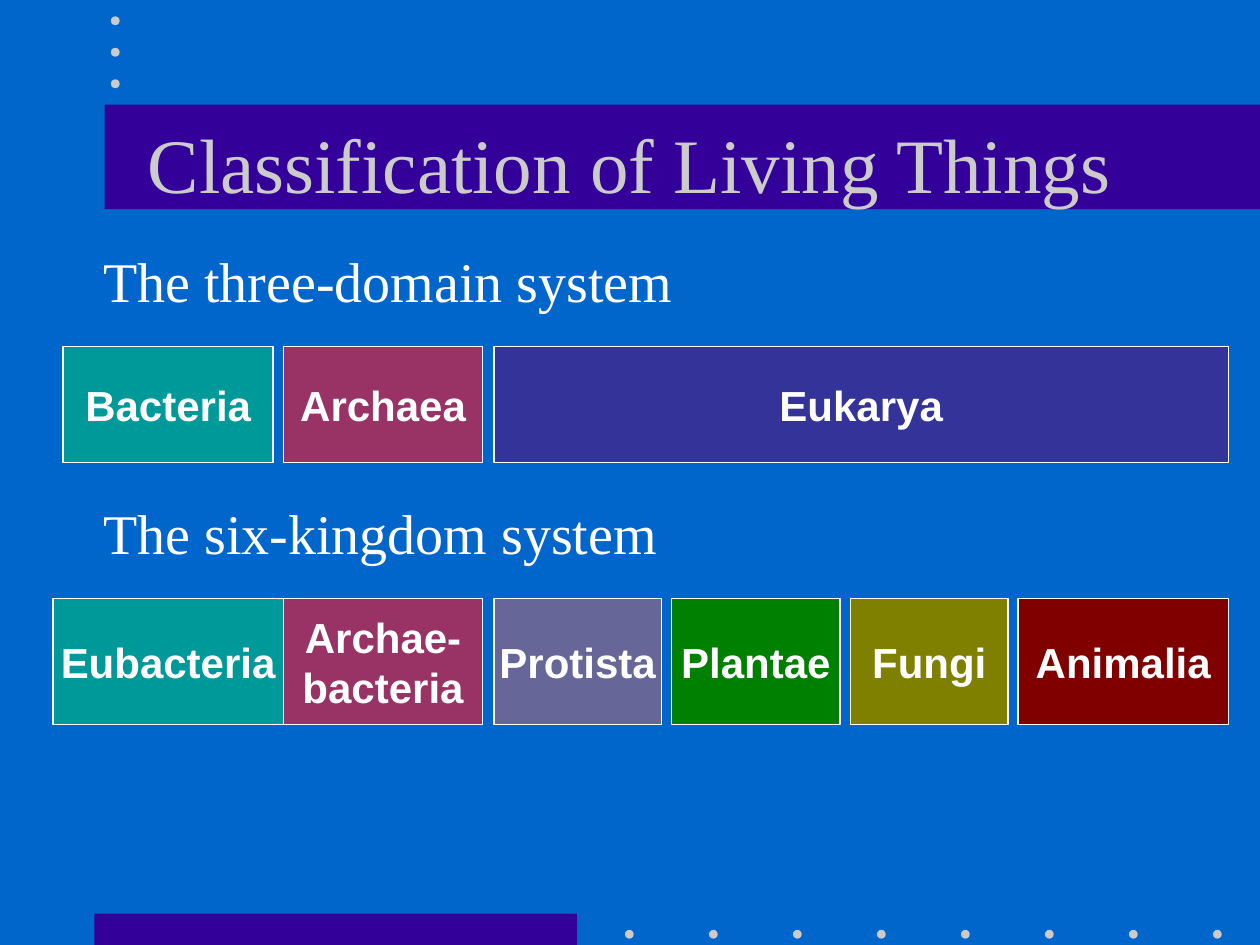
from dataclasses import dataclass

from pptx import Presentation
from pptx.dml.color import RGBColor
from pptx.enum.shapes import MSO_SHAPE
from pptx.enum.text import MSO_ANCHOR, MSO_AUTO_SIZE, PP_ALIGN
from pptx.util import Inches, Pt

RECTANGLE, OVAL = MSO_SHAPE.RECTANGLE, MSO_SHAPE.OVAL
MIDDLE, CENTER, LEFT = MSO_ANCHOR.MIDDLE, PP_ALIGN.CENTER, PP_ALIGN.LEFT
TITLE_ONLY = 5


@dataclass(frozen=True)
class Theme:
    background: str = "0066CC"
    bar: str = "330099"
    dot: str = "CBCBCB"
    title: str = "CBCBCB"
    text: str = "FFFFFF"
    bacteria: str = "009999"
    archaea: str = "993366"
    eukarya: str = "333399"
    protista: str = "666699"
    plantae: str = "008000"
    fungi: str = "808000"
    animalia: str = "800000"
    serif: str = "Times New Roman"
    sans: str = "Arial"
    title_size: int = 44
    heading_size: int = 32
    label_size: int = 24


theme = Theme()


def add_block(kind, left, top, width, height, color):
    """Add a filled shape without outline or shadow."""
    block = slide.shapes.add_shape(
        kind, Inches(left), Inches(top), Inches(width), Inches(height))
    block.shadow.inherit = False
    block.fill.solid()
    block.fill.fore_color.rgb = RGBColor.from_string(color)
    block.line.fill.background()
    return block


def write(frame, lines, font, size, color, align, bold=False):
    """Write each line as a paragraph of its own."""
    for index, line in enumerate(lines):
        para = frame.add_paragraph() if index else frame.paragraphs[0]
        para.alignment = align
        span = para.add_run()
        span.text = line
        span.font.name = font
        span.font.size = Pt(size)
        span.font.bold = bold
        span.font.color.rgb = RGBColor.from_string(color)


deck = Presentation()
deck.slide_width, deck.slide_height = Inches(10), Inches(7.5)
slide = deck.slides.add_slide(deck.slide_layouts[TITLE_ONLY])
slide.background.fill.solid()
slide.background.fill.fore_color.rgb = RGBColor.from_string(theme.background)

# Bars and rows of dots
add_block(RECTANGLE, 0.75, 7.25, 3.83, 0.25, theme.bar)
add_block(RECTANGLE, 0.83, 0.83, 9.17, 0.83, theme.bar)
bottom_dots = [(4.96 + column * 2 / 3, 7.38) for column in range(8)]
top_dots = [(0.88, 0.13 + row * 0.25) for row in range(3)]
for left, top in bottom_dots + top_dots:
    add_block(OVAL, left, top, 0.07, 0.07, theme.dot)

# Title, brought in front of its bar
title = slide.shapes.title
title.left, title.top = Inches(0.75), Inches(0.67)
title.width, title.height = Inches(8.5), Inches(1.25)
title.text_frame.vertical_anchor = MIDDLE
title.text_frame.auto_size = MSO_AUTO_SIZE.NONE
write(title.text_frame, ["Classification of Living Things"],
      theme.serif, theme.title_size, theme.title, CENTER)
title.element.getparent().append(title.element)

# Each system: heading, heading top, box top, box height, boxes
# Each box: lines, left edge, right edge, colour
systems = [
    ("The three-domain system", 1.92, 2.75, 0.92, [
        (["Bacteria"], 0.5, 2.17, theme.bacteria),
        (["Archaea"], 2.25, 3.83, theme.archaea),
        (["Eukarya"], 3.92, 9.75, theme.eukarya),
    ]),
    ("The six-kingdom system", 3.92, 4.75, 1, [
        (["Eubacteria"], 0.42, 2.25, theme.bacteria),
        (["Archae-", "bacteria"], 2.25, 3.83, theme.archaea),
        (["Protista"], 3.92, 5.25, theme.protista),
        (["Plantae"], 5.33, 6.67, theme.plantae),
        (["Fungi"], 6.75, 8, theme.fungi),
        (["Animalia"], 8.08, 9.75, theme.animalia),
    ]),
]
for heading, heading_top, box_top, box_height, boxes in systems:
    heading_box = slide.shapes.add_textbox(
        Inches(0.75), Inches(heading_top), Inches(5.42), Inches(0.6))
    frame = heading_box.text_frame
    frame.word_wrap = True
    frame.auto_size = MSO_AUTO_SIZE.SHAPE_TO_FIT_TEXT
    frame.margin_left = frame.margin_right = Inches(0.07)
    frame.margin_top = frame.margin_bottom = Inches(0.04)
    write(frame, [heading], theme.serif, theme.heading_size, theme.text, LEFT)

    for lines, left, right, color in boxes:
        box = add_block(RECTANGLE, left, box_top, right - left, box_height, color)
        box.line.color.rgb = RGBColor.from_string(theme.text)
        box.line.width = Pt(1)
        box.text_frame.word_wrap = False
        box.text_frame.vertical_anchor = MIDDLE
        write(box.text_frame, lines, theme.sans, theme.label_size,
              theme.text, CENTER, bold=True)

deck.save("out.pptx")
